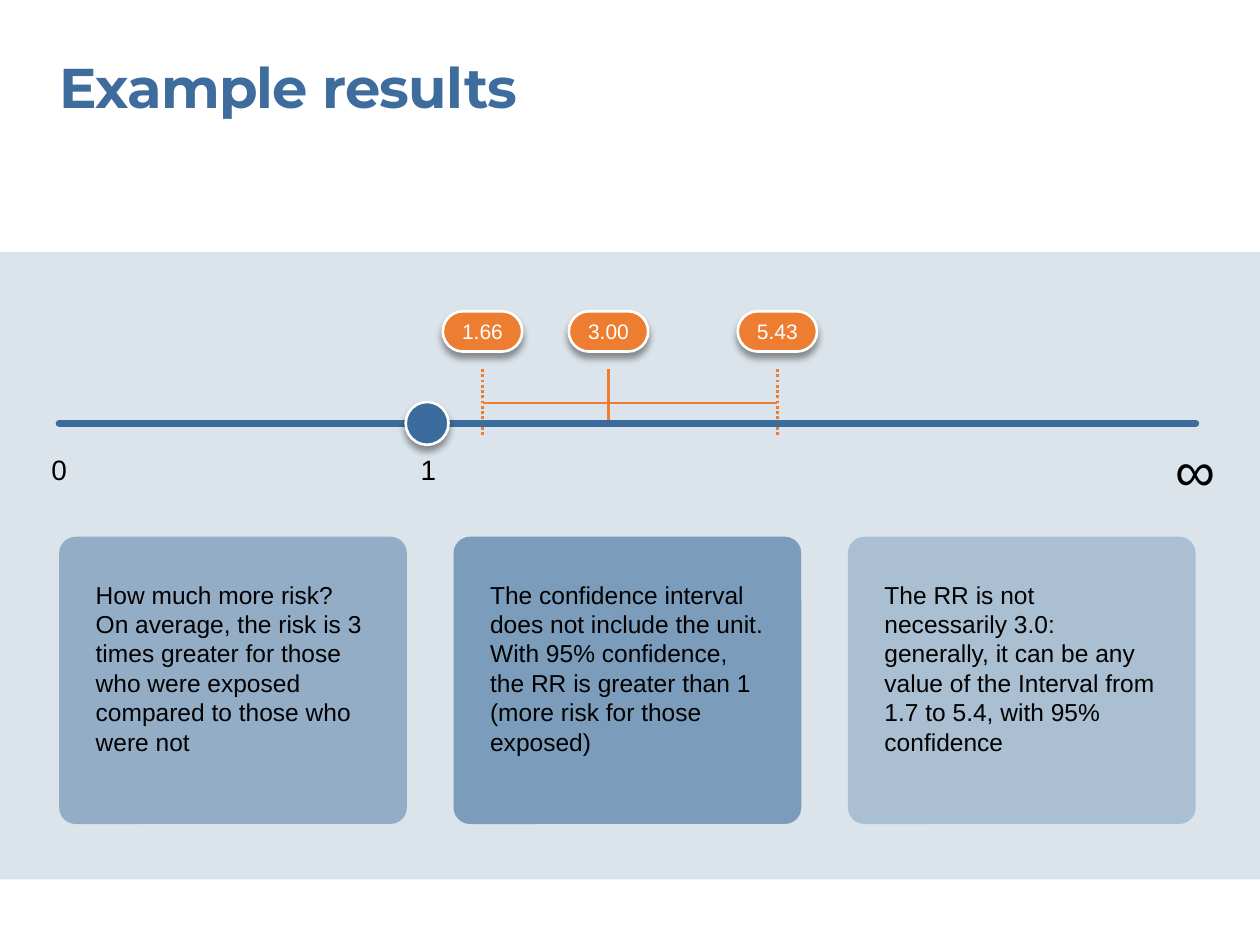
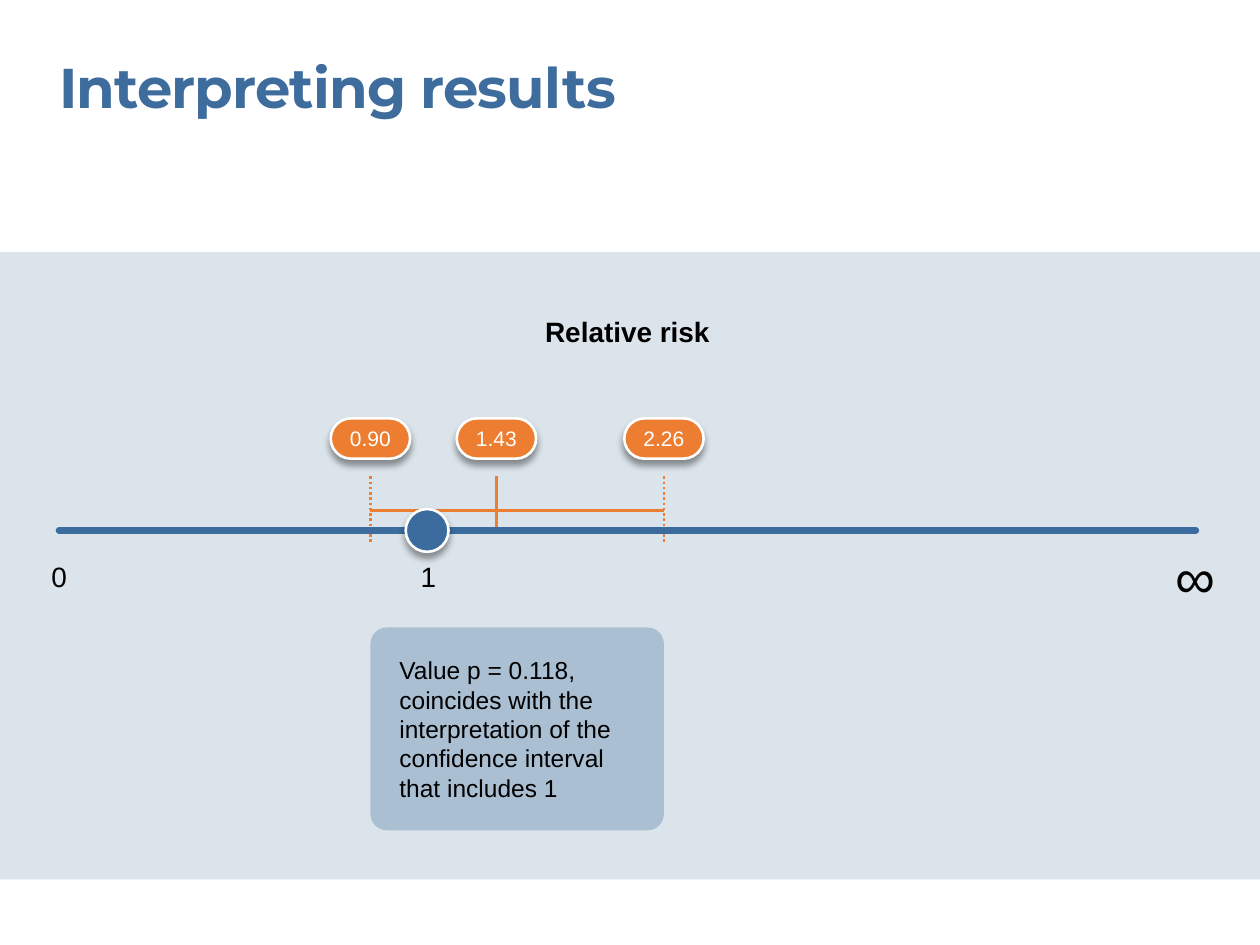
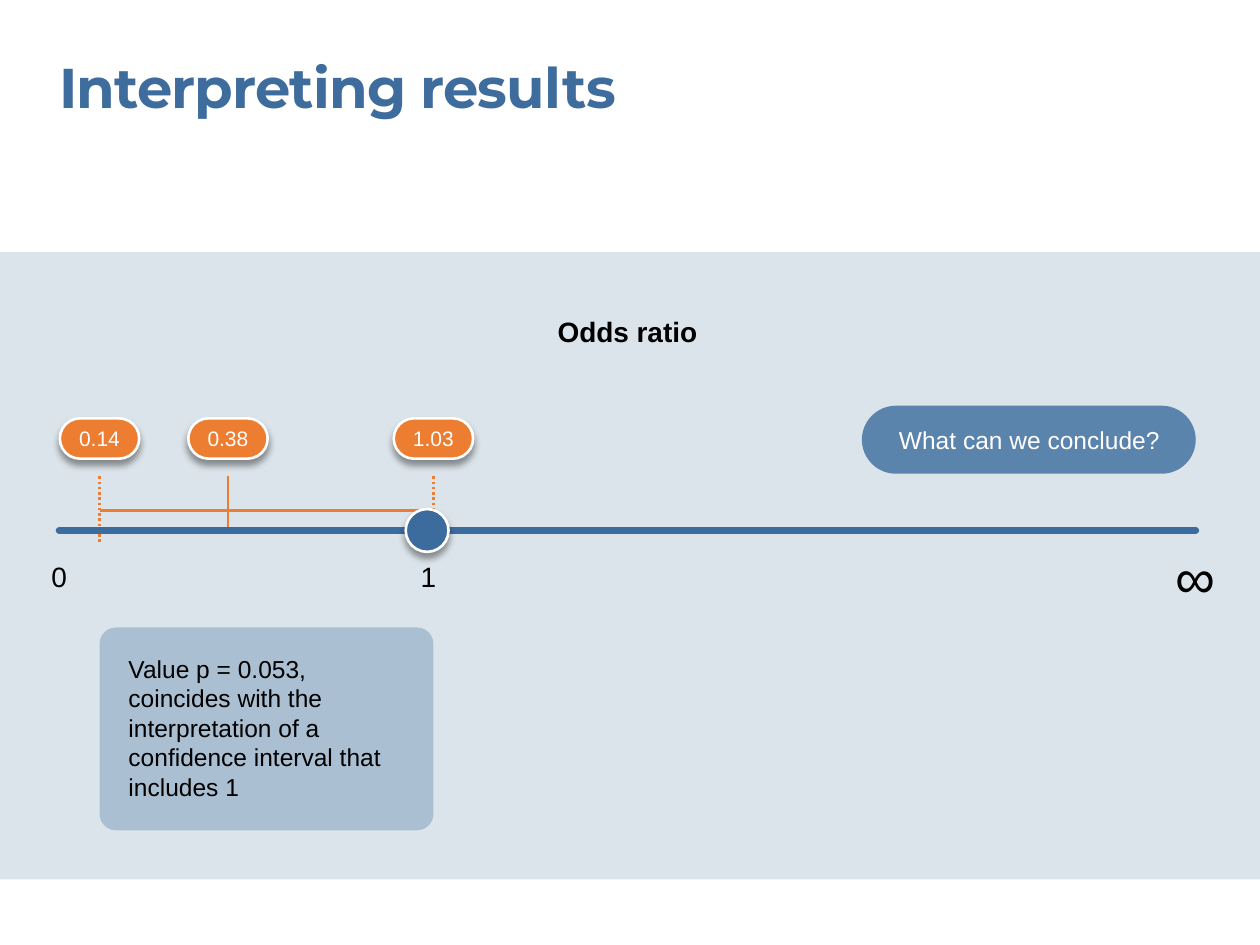
from lxml import etree
from pptx import Presentation
from pptx.dml.color import RGBColor
from pptx.enum.dml import MSO_LINE
from pptx.enum.shapes import MSO_CONNECTOR, MSO_SHAPE
from pptx.enum.text import MSO_ANCHOR, MSO_AUTO_SIZE, PP_ALIGN
from pptx.oxml.ns import qn
from pptx.util import Inches, Pt

RECT, ROUND, OVAL = MSO_SHAPE.RECTANGLE, MSO_SHAPE.ROUNDED_RECTANGLE, MSO_SHAPE.OVAL
LEFT, CENTER = PP_ALIGN.LEFT, PP_ALIGN.CENTER
DOTTED = MSO_LINE.ROUND_DOT

TITLE_BLUE, BLUE, BAND = "3D6C9D", "3C6C9D", "DBE4EA"
ORANGE, RULE_ORANGE = "ED7D31", "ED7D30"
BLACK, WHITE = "000000", "FFFFFF"

MARGIN, RIGHT = 0.47, 9.49
ONE_X = 3.39
BADGE_W, BADGE_H = 0.63, 0.32
CARD_RADIUS = 0.13

# Content: interval is (value, x) for lower limit, estimate, upper limit;
# a card is (box, opacity, text box, text)
CARD_TEXTS = [
    (45, "How much more risk? On average, the risk is 3 times greater for those "
         "who were exposed compared to those who were not"),
    (60, "The confidence interval does not include the unit. With 95% confidence, "
         "the RR is greater than 1 (more risk for those exposed)"),
    (30, "The RR is not necessarily 3.0: generally, it can be any value of the "
         "Interval from 1.7 to 5.4, with 95% confidence"),
]
CARD_W, CARD_STEP = 2.76, 3.13
RESULT_CARDS = [
    ((MARGIN + i * CARD_STEP, 4.26, CARD_W, 2.28), opacity,
     (MARGIN + i * CARD_STEP + 0.29, 4.6, 2.17, 1.41), text)
    for i, (opacity, text) in enumerate(CARD_TEXTS)
]

SLIDES = [
    {"title": "Example results", "axis_y": 3.36,
     "interval": [("1.66", 3.83), ("3.00", 4.83), ("5.43", 6.17)],
     "cards": RESULT_CARDS},
    {"title": "Interpreting results", "axis_y": 4.21, "measure": "Relative risk",
     "interval": [("0.90", 2.94), ("1.43", 3.94), ("2.26", 5.27)],
     "cards": [((2.94, 4.98, 2.33, 1.61), 30, (3.17, 5.2, 1.94, 1.18),
                "Value p = 0.118, coincides with the interpretation of the "
                "confidence interval that includes 1")]},
    {"title": "Interpreting results", "axis_y": 4.21, "measure": "Odds ratio",
     "interval": [("0.14", 0.79), ("0.38", 1.81), ("1.03", 3.44)],
     "cards": [((0.79, 4.98, 2.65, 1.61), 30, (1.02, 5.19, 2.2, 1.18),
                "Value p = 0.053, coincides with the interpretation of a "
                "confidence interval that includes 1")],
     "question": "What can we conclude?"},
]


def rgb(color):
    return RGBColor.from_string(color)


def inches(*values):
    return [Inches(v) for v in values]


def write(tf, text, size, color=BLACK, align=LEFT, bold=False, font="Arial", insets=(0, 0)):
    tf.text = text
    tf.margin_left = tf.margin_right = Inches(insets[0])
    tf.margin_top = tf.margin_bottom = Inches(insets[1])
    p = tf.paragraphs[0]
    p.alignment = align
    r = p.runs[0]
    r.font.size, r.font.name, r.font.bold = Pt(size), font, bold
    r.font.color.rgb = rgb(color)
    return r


def add_text(s, box, text, size, **style):
    tf = s.shapes.add_textbox(*inches(*box)).text_frame
    tf.word_wrap = True
    tf.auto_size = MSO_AUTO_SIZE.SHAPE_TO_FIT_TEXT
    write(tf, text, size, **style)


def add_shape(s, kind, box, fill, opacity=100, radius=None):
    sp = s.shapes.add_shape(kind, *inches(*box))
    sp.shadow.inherit = False
    sp.fill.solid()
    sp.fill.fore_color.rgb = rgb(fill)
    sp.line.fill.background()
    if radius is not None:
        sp.adjustments[0] = radius / min(box[2:])
    if opacity < 100:
        clr = sp._element.spPr.find(qn("a:solidFill")).find(qn("a:srgbClr"))
        etree.SubElement(clr, qn("a:alpha"), val=str(opacity * 1000))
    return sp


def raise_shape(sp):
    """White outline and a soft shadow below."""
    sp.line.color.rgb = rgb(WHITE)
    sp.line.width = Pt(1.5)
    effects = sp._element.spPr.find(qn("a:effectLst"))
    shadow = etree.SubElement(effects, qn("a:outerShdw"), blurRad=str(Pt(4)),
                              dist=str(Pt(3)), dir="5400000", rotWithShape="0")
    clr = etree.SubElement(shadow, qn("a:srgbClr"), val=BLACK)
    etree.SubElement(clr, qn("a:alpha"), val="40000")


def add_line(s, x1, y1, x2, y2, color=RULE_ORANGE, width=1.5, dash=None, cap="flat"):
    c = s.shapes.add_connector(MSO_CONNECTOR.STRAIGHT, *inches(x1, y1, x2, y2))
    c.line.color.rgb = rgb(color)
    c.line.width = Pt(width)
    if dash is not None:
        c.line.dash_style = dash
    spPr = c._element.spPr
    spPr.find(qn("a:ln")).set("cap", cap)
    etree.SubElement(spPr, qn("a:effectLst"))


def add_frame(s, title):
    """Title and the pale band behind the content."""
    add_shape(s, RECT, (0, 2, 10, 4.98), BAND)
    sp = s.shapes.title
    sp.left, sp.top, sp.width, sp.height = inches(MARGIN, 0.42, 9.02, 0.54)
    tf = sp.text_frame
    r = write(tf, title, 32, color=TITLE_BLUE, bold=True, font="Montserrat")
    tf.vertical_anchor = MSO_ANCHOR.TOP
    tf.auto_size = MSO_AUTO_SIZE.SHAPE_TO_FIT_TEXT
    r._r.get_or_add_rPr().set("spc", "-50")


def add_scale(s, y, interval):
    """Confidence interval drawn over an axis from 0 to infinity."""
    low, estimate, high = [x for _, x in interval]
    for x in (low, high):
        add_line(s, x, y - 0.43, x, y + 0.1, dash=DOTTED)
    add_line(s, low, y - 0.16, high, y - 0.16)
    add_line(s, estimate, y - 0.43, estimate, y)

    add_line(s, MARGIN, y, RIGHT, y, color=BLUE, width=4, cap="rnd")
    raise_shape(add_shape(s, OVAL, (ONE_X - 0.17, y - 0.17, 0.34, 0.34), BLUE))
    for label, x, dy, h, size in (("0", MARGIN, 0.23, 0.27, 16),
                                  ("1", ONE_X + 0.01, 0.23, 0.27, 16),
                                  ("∞", RIGHT, 0.1, 0.54, 32)):
        add_text(s, (x - 0.18, y + dy, 0.36, h), label, size, align=CENTER)

    for value, x in interval:
        box = (x - BADGE_W / 2, y - 0.89, BADGE_W, BADGE_H)
        sp = add_shape(s, ROUND, box, ORANGE, radius=BADGE_H / 2)
        raise_shape(sp)
        tf = sp.text_frame
        tf.word_wrap = False
        tf.vertical_anchor = MSO_ANCHOR.MIDDLE
        write(tf, value, 12, color=WHITE, align=CENTER, insets=(0.2, 0.12))


def main():
    prs = Presentation()
    prs.slide_width, prs.slide_height = inches(10, 7.5)
    title_only = prs.slide_layouts[5]
    for content in SLIDES:
        s = prs.slides.add_slide(title_only)
        add_frame(s, content["title"])
        add_scale(s, content["axis_y"], content["interval"])
        for box, opacity, text_box, text in content["cards"]:
            add_shape(s, ROUND, box, BLUE, opacity, CARD_RADIUS)
            add_text(s, text_box, text, 14)
        if "measure" in content:
            add_text(s, (0.48, 2.5, 9, 0.27), content["measure"], 16, align=CENTER, bold=True)
        if "question" in content:
            add_shape(s, ROUND, (6.84, 3.22, 2.65, 0.54), BLUE, 80, 0.27)
            add_text(s, (7.07, 3.37, 2.2, 0.24), content["question"], 14,
                     color=WHITE, align=CENTER)
    prs.save("out.pptx")


if __name__ == "__main__":
    main()
